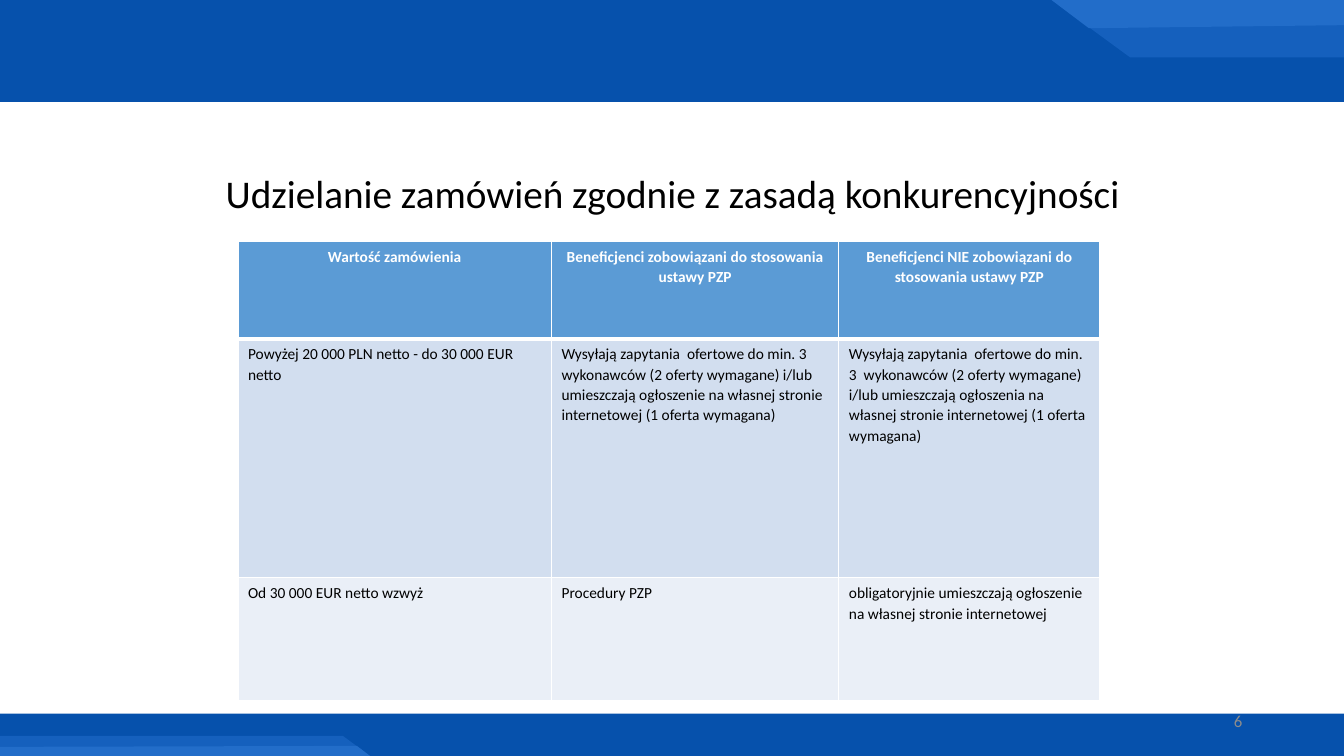
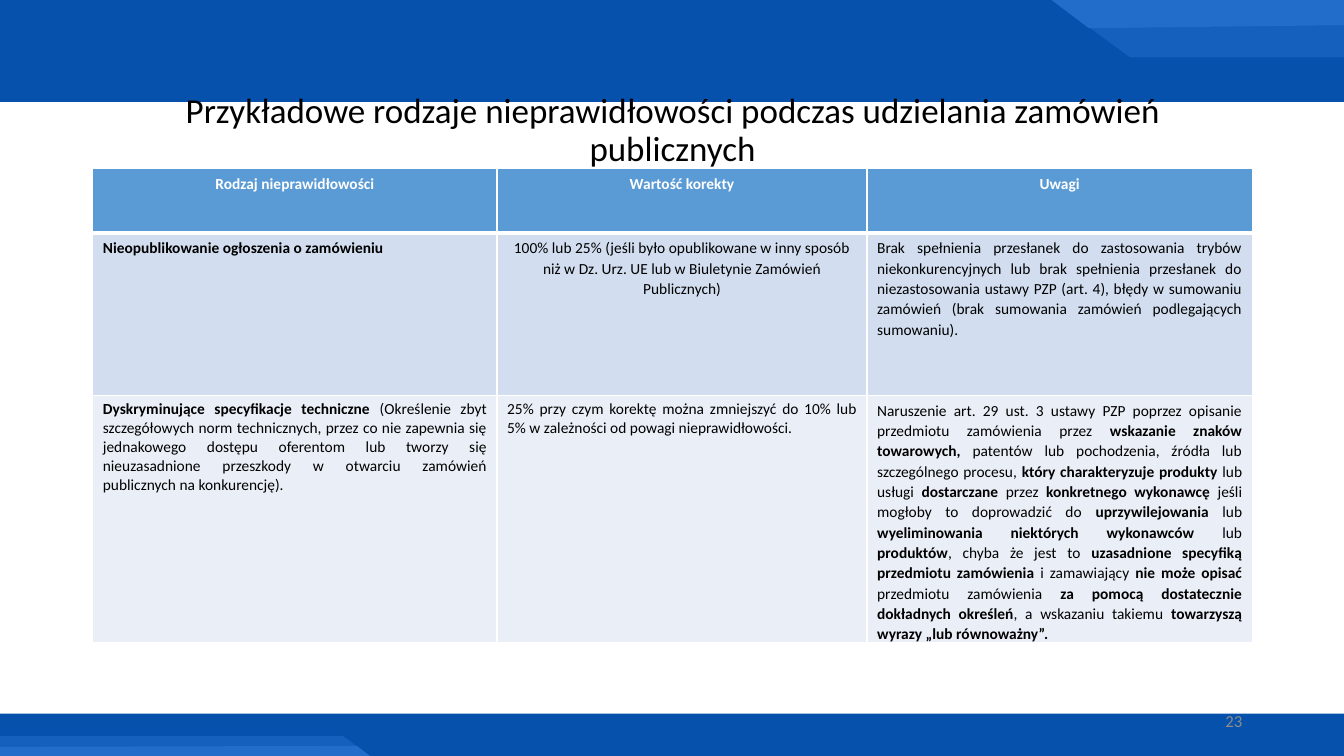
from lxml.etree import SubElement
from pptx import Presentation
from pptx.dml.color import RGBColor
from pptx.enum.shapes import MSO_SHAPE
from pptx.enum.text import MSO_ANCHOR, PP_ALIGN
from pptx.oxml.ns import qn
from pptx.util import Inches, Pt

WIDTH, HEIGHT = 13.33, 7.5
MARGIN = 0.92
CONTENT_WIDTH = 11.5
FONT = "Calibri"

NAVY = RGBColor(0x06, 0x51, 0xAC)
BLUE = RGBColor(0x15, 0x60, 0xBD)
LIGHT_BLUE = RGBColor(0x22, 0x6D, 0xC9)
HEADER_FILL = RGBColor(0x5B, 0x9B, 0xD5)
ROW_FILLS = [RGBColor(0xD2, 0xDE, 0xEF), RGBColor(0xEA, 0xEF, 0xF7)]
WHITE = RGBColor(0xFF, 0xFF, 0xFF)
BLACK = RGBColor(0x00, 0x00, 0x00)
GRAY = RGBColor(0x8C, 0x8C, 0x8C)

LEFT, CENTER, RIGHT, JUSTIFY = PP_ALIGN.LEFT, PP_ALIGN.CENTER, PP_ALIGN.RIGHT, PP_ALIGN.JUSTIFY
CELL_SPACING = {"line_spacing": 1.07, "space_after": 6}

# Top and height of each full-width band
BANDS = [(-0.03, 1.04), (7.08, 0.42)]
# Colour and corners of each slanted accent
ACCENTS = [
    (BLUE, [(WIDTH, -0.03), (10.39, -0.03), (11.21, 0.57), (WIDTH, 0.57)]),
    (LIGHT_BLUE, [(WIDTH, -0.03), (10.39, -0.03), (10.8, 0.28), (WIDTH, 0.25)]),
    (BLUE, [(0, HEIGHT), (3.67, HEIGHT), (3.4, 7.3), (0, 7.3)]),
    (LIGHT_BLUE, [(0, HEIGHT), (3.67, HEIGHT), (3.54, 7.4), (0, 7.41)]),
]

# Body cells are (text, alignment, spacing); ** switches bold on and off
SLIDES = [
    {
        "title": "Udzielanie zamówień zgodnie z zasadą konkurencyjności",
        "title_size": 28,
        "title_top": 1.68,
        "title_height": 0.53,
        "number": "6",
        "origin": (2.36, 2.39),
        "columns": [3.11, 2.85, 2.59],
        "rows": [0.97, 2.37, 1.22],
        "header": [
            "Wartość zamówienia",
            "Beneficjenci zobowiązani do stosowania ustawy PZP",
            "Beneficjenci NIE zobowiązani do stosowania ustawy PZP",
        ],
        "body": [
            [
                ("Powyżej 20 000 PLN netto - do 30 000 EUR netto", LEFT, CELL_SPACING),
                ("Wysyłają zapytania  ofertowe do min. 3  wykonawców (2 oferty wymagane) i/lub "
                 "umieszczają ogłoszenie na własnej stronie internetowej (1 oferta wymagana)",
                 LEFT, CELL_SPACING),
                ("Wysyłają zapytania  ofertowe do min. 3  wykonawców (2 oferty wymagane) i/lub "
                 "umieszczają ogłoszenia na własnej stronie internetowej (1 oferta wymagana)",
                 LEFT, CELL_SPACING),
            ],
            [
                ("Od 30 000 EUR netto wzwyż", LEFT, CELL_SPACING),
                ("Procedury PZP", LEFT, CELL_SPACING),
                ("obligatoryjnie umieszczają ogłoszenie na własnej stronie internetowej",
                 LEFT, CELL_SPACING),
            ],
        ],
    },
    {
        "title": "Przykładowe rodzaje nieprawidłowości podczas udzielania zamówień publicznych",
        "title_size": 25,
        "title_top": 0.88,
        "title_height": 0.86,
        "number": "23",
        "origin": (MARGIN, 1.67),
        "columns": [4.01, 3.67, 3.82],
        "rows": [0.64, 1.61, 2.46],
        "header": ["Rodzaj nieprawidłowości", "Wartość korekty", "Uwagi"],
        "body": [
            [
                ("**Nieopublikowanie ogłoszenia o zamówieniu**", LEFT, CELL_SPACING),
                ("100% lub 25% (jeśli było opublikowane w inny sposób niż w Dz. Urz. UE lub "
                 "w Biuletynie Zamówień Publicznych)", CENTER, CELL_SPACING),
                ("Brak spełnienia przesłanek do zastosowania trybów niekonkurencyjnych lub brak "
                 "spełnienia przesłanek do niezastosowania ustawy PZP (art. 4), błędy w sumowaniu "
                 "zamówień (brak sumowania zamówień podlegających sumowaniu).",
                 JUSTIFY, CELL_SPACING),
            ],
            [
                ("**Dyskryminujące specyfikacje techniczne **(Określenie zbyt szczegółowych norm "
                 "technicznych, przez co nie zapewnia się jednakowego dostępu oferentom lub tworzy "
                 "się nieuzasadnione przeszkody w otwarciu zamówień publicznych na konkurencję).",
                 JUSTIFY, {}),
                ("25% przy czym korektę można zmniejszyć do 10% lub 5% w zależności od powagi "
                 "nieprawidłowości.", JUSTIFY, {}),
                ("Naruszenie art. 29 ust. 3 ustawy PZP poprzez opisanie przedmiotu zamówienia przez "
                 "**wskazanie znaków towarowych, **patentów lub pochodzenia, źródła lub "
                 "szczególnego procesu, **który charakteryzuje produkty **lub usługi "
                 "**dostarczane** przez **konkretnego wykonawcę **jeśli mogłoby to doprowadzić do "
                 "**uprzywilejowania** lub **wyeliminowania niektórych wykonawców** lub"
                 "** produktów**, chyba że jest to **uzasadnione specyfiką przedmiotu zamówienia** "
                 "i zamawiający **nie może opisać **przedmiotu zamówienia **za pomocą dostatecznie "
                 "dokładnych określeń**, a wskazaniu takiemu **towarzyszą wyrazy „lub "
                 "równoważny”.**", JUSTIFY, CELL_SPACING),
            ],
        ],
    },
]


def write(frame, text, size, color=BLACK, align=LEFT, anchor=MSO_ANCHOR.TOP,
          line_spacing=1.0, space_after=0):
    """Fill a text frame with one paragraph; ** switches bold on and off."""
    frame.word_wrap = True
    frame.vertical_anchor = anchor
    para = frame.paragraphs[0]
    para.alignment = align
    para.line_spacing = line_spacing
    para.space_before = Pt(0)
    para.space_after = Pt(space_after)
    for index, part in enumerate(text.split("**")):
        if part:
            span = para.add_run()
            span.text = part
            span.font.name = FONT
            span.font.size = Pt(size)
            span.font.bold = index % 2 == 1
            span.font.color.rgb = color


def place(shape, left, top, width, height):
    shape.left, shape.top = Inches(left), Inches(top)
    shape.width, shape.height = Inches(width), Inches(height)


def paint(shape, color):
    shape.shadow.inherit = False
    shape.fill.solid()
    shape.fill.fore_color.rgb = color
    shape.line.fill.background()


def decorate_layout(layout, slide):
    """Draw the bands and accents on a slide, then move them to its layout."""
    shapes = []
    for top, height in BANDS:
        band = slide.shapes.add_shape(
            MSO_SHAPE.RECTANGLE, 0, Inches(top), Inches(WIDTH), Inches(height))
        paint(band, NAVY)
        shapes.append(band)
    for color, corners in ACCENTS:
        points = [(Inches(x), Inches(y)) for x, y in corners]
        builder = slide.shapes.build_freeform(*points[0])
        builder.add_line_segments(points[1:], close=True)
        accent = builder.convert_to_shape()
        paint(accent, color)
        shapes.append(accent)
    for position, shape in enumerate(shapes, start=2):
        layout.shapes.element.insert(position, shape.element)


def style_cell(cell, fill, borders):
    """Set the fill and the white borders, given as side: width in points."""
    properties = cell._tc.get_or_add_tcPr()
    for side, width in borders.items():
        line = SubElement(properties, qn(f"a:ln{side}"), w=str(Pt(width)))
        solid = SubElement(line, qn("a:solidFill"))
        SubElement(solid, qn("a:srgbClr"), val=str(WHITE))
    cell.fill.solid()
    cell.fill.fore_color.rgb = fill


def add_content_table(slide, content):
    columns, rows = content["columns"], content["rows"]
    left, top = content["origin"]
    table = slide.shapes.add_table(
        len(rows), len(columns), Inches(left), Inches(top),
        Inches(sum(columns)), Inches(sum(rows))).table
    for column, width in zip(table.columns, columns):
        column.width = Inches(width)
    for row, height in zip(table.rows, rows):
        row.height = Inches(height)

    for cell, text in zip(table.rows[0].cells, content["header"]):
        style_cell(cell, HEADER_FILL, {"L": 1, "R": 1, "T": 1, "B": 3})
        write(cell.text_frame, f"**{text}**", 11, color=WHITE, align=CENTER, **CELL_SPACING)
    for index, body_row in enumerate(content["body"]):
        for cell, (text, align, spacing) in zip(table.rows[index + 1].cells, body_row):
            style_cell(cell, ROW_FILLS[index % 2], {"L": 1, "R": 1, "B": 1})
            write(cell.text_frame, text, 11, align=align, **spacing)


def fill_slide(slide, content):
    title = slide.shapes.title
    place(title, MARGIN, content["title_top"], CONTENT_WIDTH, content["title_height"])
    write(title.text_frame, content["title"], content["title_size"],
          align=CENTER, line_spacing=0.9)
    number = slide.shapes.add_textbox(0, 0, 0, 0)
    place(number, MARGIN + CONTENT_WIDTH - 3, 6.95, 3, 0.4)
    write(number.text_frame, content["number"], 12, color=GRAY,
          align=RIGHT, anchor=MSO_ANCHOR.MIDDLE)
    add_content_table(slide, content)


def main():
    deck = Presentation()
    deck.slide_width, deck.slide_height = Inches(WIDTH), Inches(HEIGHT)
    layout = deck.slide_layouts[5]
    pages = [deck.slides.add_slide(layout) for _ in SLIDES]
    decorate_layout(layout, pages[0])
    for page, content in zip(pages, SLIDES):
        fill_slide(page, content)
    deck.save("out.pptx")


if __name__ == "__main__":
    main()
